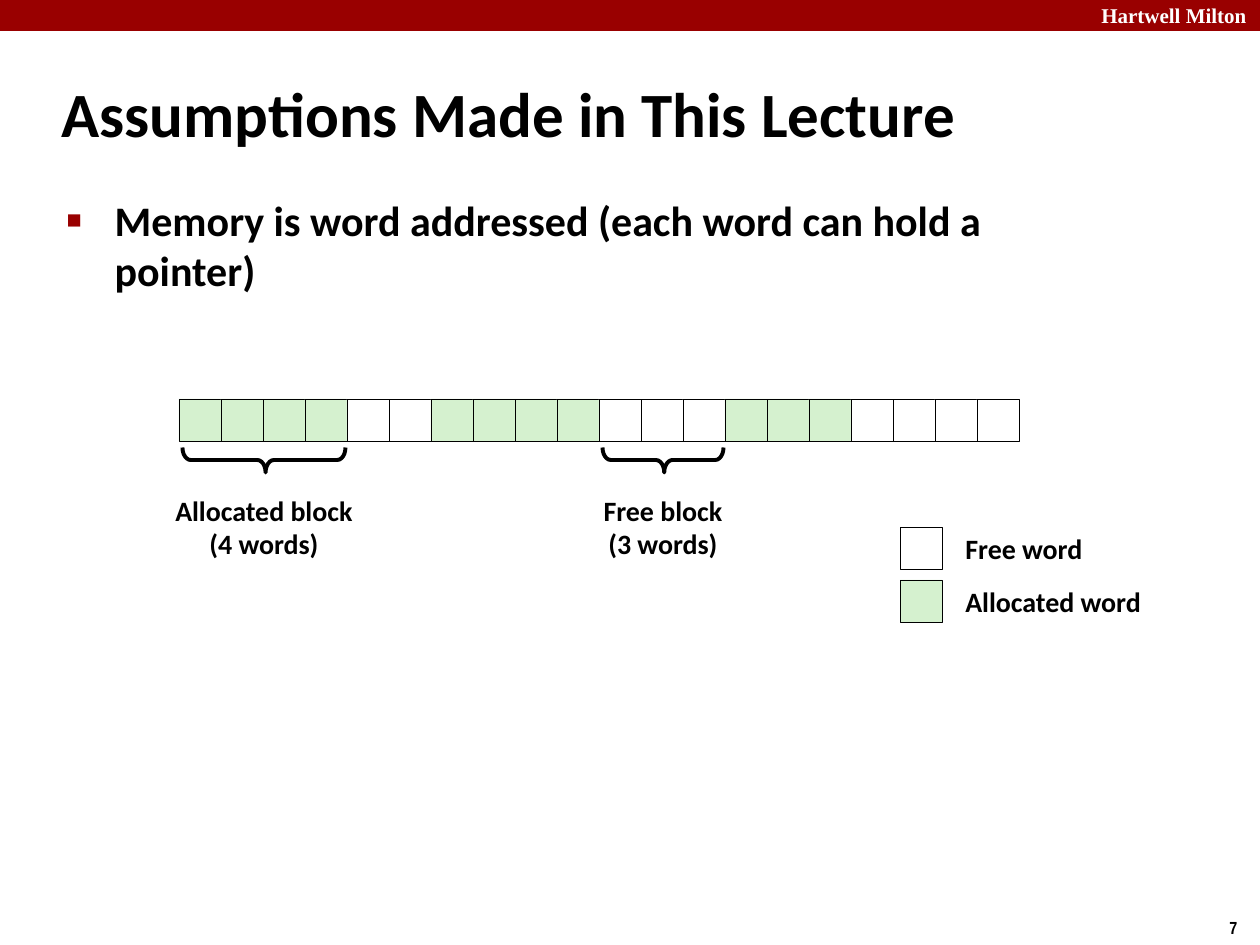
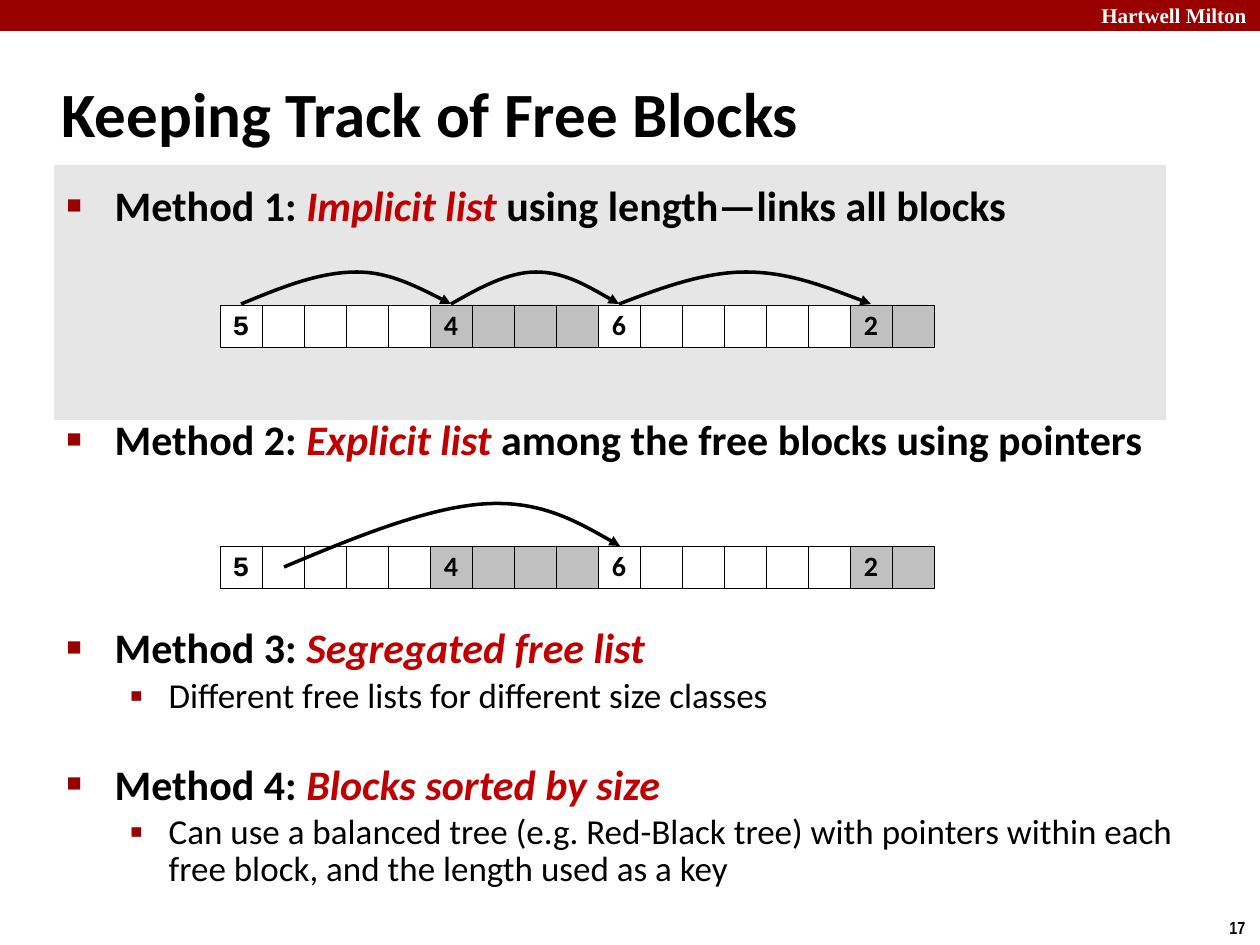
"""Build two lecture slides about memory blocks and free lists."""
from lxml.etree import SubElement
from pptx import Presentation
from pptx.dml.color import RGBColor
from pptx.enum.shapes import MSO_SHAPE
from pptx.enum.text import MSO_ANCHOR, MSO_AUTO_SIZE, PP_ALIGN
from pptx.oxml.ns import qn
from pptx.util import Emu, Pt

SCALE = 914400 / 126
CELL = 42
COLORS = {
    "band": "990000", "accent": "C00000", "ink": "000000", "free": "FFFFFF",
    "allocated": "D5F1CF", "taken": "C0C0C0", "panel": "E6E6E6",
}
LEVELS = [
    {"margin": 48, "hang": 48, "bullet": "■", "bullet_size": 60, "size": 24, "bold": True},
    {"margin": 102, "hang": 39, "bullet": "▪", "bullet_size": 110, "size": 20, "bold": False},
]


def px(length):
    """Turn a pixel length into EMU."""
    return Emu(round(length * SCALE))


def rgb(name):
    """Look up a named colour."""
    return RGBColor.from_string(COLORS[name])


def add_text(para, text, size=16, color="ink", font="Calibri", bold=True, italic=False):
    """Append one formatted span to a paragraph."""
    span = para.add_run()
    span.text = text
    span.font.size = Pt(size)
    span.font.name = font
    span.font.bold = bold
    span.font.italic = italic
    span.font.color.rgb = rgb(color)


def add_label(page, left, top, width, height, lines, align=PP_ALIGN.LEFT,
              spacing=0.98, wrap=False, **text_format):
    """Add a text box with one paragraph per line."""
    box = page.shapes.add_textbox(px(left), px(top), px(width), px(height))
    frame = box.text_frame
    frame.word_wrap = wrap
    for index, line in enumerate(lines):
        para = frame.add_paragraph() if index else frame.paragraphs[0]
        para.alignment = align
        para.line_spacing = spacing
        add_text(para, line, **text_format)


def add_box(page, left, top, width, height, fill, outlined=False):
    """Add a filled rectangle."""
    box = page.shapes.add_shape(MSO_SHAPE.RECTANGLE, px(left), px(top), px(width), px(height))
    box.shadow.inherit = False
    box.fill.solid()
    box.fill.fore_color.rgb = rgb(fill)
    if outlined:
        style_line(box, 0.25)
    else:
        box.line.fill.background()
    return box


def style_line(shape, width):
    """Give a shape a black line."""
    shape.line.color.rgb = rgb("ink")
    shape.line.width = Pt(width)


def add_word(page, left, top, fill, label="", font="Calibri"):
    """Add one memory word with an optional size label."""
    word = add_box(page, left, top, CELL, CELL, fill, outlined=True)
    if label:
        frame = word.text_frame
        frame.word_wrap = False
        frame.vertical_anchor = MSO_ANCHOR.MIDDLE
        para = frame.paragraphs[0]
        para.alignment = PP_ALIGN.CENTER
        para.line_spacing = 0.98
        add_text(para, label, font=font)


def add_memory(page, left, top, blocks, labelled=False):
    """Add a row of words from (length, fill) blocks."""
    position = 0
    for length, fill in blocks:
        for offset in range(length):
            label = str(length) if labelled and offset == 0 else ""
            font = "Calibri" if position else "Courier New"
            add_word(page, left + position * CELL, top, fill, label, font)
            position += 1


def add_brace(page, center, middle, length):
    """Add a brace that opens upward."""
    depth = 25
    brace = page.shapes.add_shape(
        MSO_SHAPE.LEFT_BRACE, px(center - depth / 2), px(middle - length / 2),
        px(depth), px(length))
    brace.rotation = 270
    brace.adjustments[0] = 0.33
    brace.adjustments[1] = 0.51
    brace.shadow.inherit = False
    brace.fill.background()
    style_line(brace, 2.25)


def add_curve(page, points):
    """Add a Bezier arrow through a start point and triples of controls."""
    builder = page.shapes.build_freeform(*points[0], scale=SCALE)
    builder.add_line_segments(points[1:], close=False)
    curve = builder.convert_to_shape()
    curve.shadow.inherit = False
    curve.fill.background()
    style_line(curve, 2)
    outline = next(curve.element.iter(qn("a:path")))
    segments = outline.findall(qn("a:lnTo"))
    for start in range(0, len(segments), 3):
        bezier = SubElement(outline, qn("a:cubicBezTo"))
        for segment in segments[start:start + 3]:
            bezier.append(segment[0])
            outline.remove(segment)
    line = next(curve.element.iter(qn("a:ln")))
    SubElement(line, qn("a:tailEnd"), type="triangle")


def add_hop(page, start, peak, end, base, top):
    """Add an arched arrow between two words."""
    rise, fall, middle = (peak - start) / 3, (end - peak) / 3, (base + top) / 2
    points = [(start, base), (start + rise, middle), (peak - rise, top), (peak, top),
              (peak + fall, top), (end - fall, middle), (end, base)]
    add_curve(page, [(round(x), round(y)) for x, y in points])


def place(holder, left, top, width, height):
    """Move a placeholder and stop its text from shrinking."""
    holder.left, holder.top = px(left), px(top)
    holder.width, holder.height = px(width), px(height)
    holder.text_frame.auto_size = MSO_AUTO_SIZE.NONE
    holder.text_frame.word_wrap = True


def add_bullet(para, level, before, spans, spacing=1.0):
    """Fill a list paragraph with (text, is term) spans."""
    style = LEVELS[level]
    para.level = level
    para.line_spacing = spacing
    para.space_before = Pt(before)
    properties = para._p.get_or_add_pPr()
    properties.set("marL", str(px(style["margin"])))
    properties.set("indent", str(-px(style["hang"])))
    color = SubElement(properties, qn("a:buClr"))
    SubElement(color, qn("a:srgbClr"), val=COLORS["band"])
    SubElement(properties, qn("a:buSzPct"), val=str(style["bullet_size"] * 1000))
    SubElement(properties, qn("a:buChar"), char=style["bullet"])
    for text, is_term in spans:
        add_text(para, text, size=style["size"], bold=style["bold"],
                 color="accent" if is_term else "ink", italic=is_term)


def add_page(deck, title, number, body_area, bullets):
    """Add a page with the shared band, title, number and list."""
    page = deck.slides.add_slide(deck.slide_layouts[1])
    add_box(page, 0, 0, 1260, 31, "band")
    add_label(page, 1089, -4, 180, 38, ["Hartwell Milton"], spacing=1.0, wrap=True,
              size=12, color="free", font="Times New Roman")
    add_label(page, 1217, 911, 43, 34, [number], spacing=1.0, size=10, font="Arial Narrow")
    heading = page.shapes.title
    place(heading, 49, 60, 1046, 105)
    heading.text_frame.vertical_anchor = MSO_ANCHOR.MIDDLE
    para = heading.text_frame.paragraphs[0]
    para.alignment = PP_ALIGN.LEFT
    add_text(para, title, size=36)
    body = page.placeholders[1]
    place(body, *body_area)
    frame = body.text_frame
    for index, bullet in enumerate(bullets):
        para = frame.add_paragraph() if index else frame.paragraphs[0]
        add_bullet(para, *bullet)
    return page


def build_assumptions(deck):
    """Build the page on word-addressed memory."""
    text = "Memory is word addressed (each word can hold a pointer)"
    page = add_page(deck, "Assumptions Made in This Lecture", "7",
                    (54, 188, 1084, 685), [(0, 0, [(text, False)])])
    left = 179
    add_memory(page, left, 399, [(4, "allocated"), (2, "free"), (4, "allocated"),
                                 (3, "free"), (3, "allocated"), (4, "free")])
    for first, count, name, width in [(0, 4, "Allocated block", 204), (10, 3, "Free block", 151)]:
        center = left + (first + count / 2) * CELL + 1
        add_brace(page, center, 460, count * CELL - 5)
        add_label(page, center - width / 2, 489, width, 79,
                  [name, f"({count} words)"], align=PP_ALIGN.CENTER)
    for top, fill, name, width in [(527, "free", "Free word", 144),
                                   (580, "allocated", "Allocated word", 203)]:
        add_word(page, 900, top, fill)
        add_label(page, 953, top, width, 47, [name])


def build_methods(deck):
    """Build the page on four ways of tracking free blocks."""
    bullets = [
        (0, 0, [("Method 1: ", False), ("Implicit list ", True),
                ("using length—links all blocks", False)]),
        (0, 105, [("Method 2: ", False), ("Explicit list ", True),
                  ("among the free blocks using pointers", False)]),
        (0, 95, [("Method 3: ", False), ("Segregated free list", True)], 0.83),
        (1, 4, [("Different free lists for different size classes", False)], 0.88),
        (0, 29, [("Method 4: ", False), ("Blocks sorted by size", True)], 0.83),
        (1, 4, [("Can use a balanced tree (e.g. Red-Black tree) with pointers within each "
                 "free block, and the length used as a key", False)], 0.88),
    ]
    page = add_page(deck, "Keeping Track of Free Blocks", "17", (54, 173, 1143, 741), bullets)
    panel = add_box(page, 54, 165, 1112, 255, "panel").element
    panel.getparent().insert(2, panel)
    blocks = [(5, "free"), (4, "taken"), (6, "free"), (2, "taken")]
    left = 220
    for top in (305, 546):
        add_memory(page, left, top, blocks, labelled=True)
    for first, peak, last in [(0, 357, 5), (5, 536, 9), (9, 746, 15)]:
        start, end = (left + (word + 0.5) * CELL for word in (first, last))
        add_hop(page, start, peak, end, 304, 272)
    add_curve(page, [(284, 567), (355, 537), (427, 508), (483, 504),
                     (539, 500), (580, 523), (620, 546)])


def main():
    """Build and save the deck."""
    deck = Presentation()
    deck.slide_width, deck.slide_height = px(1260), px(945)
    build_assumptions(deck)
    build_methods(deck)
    deck.save("out.pptx")


if __name__ == "__main__":
    main()
